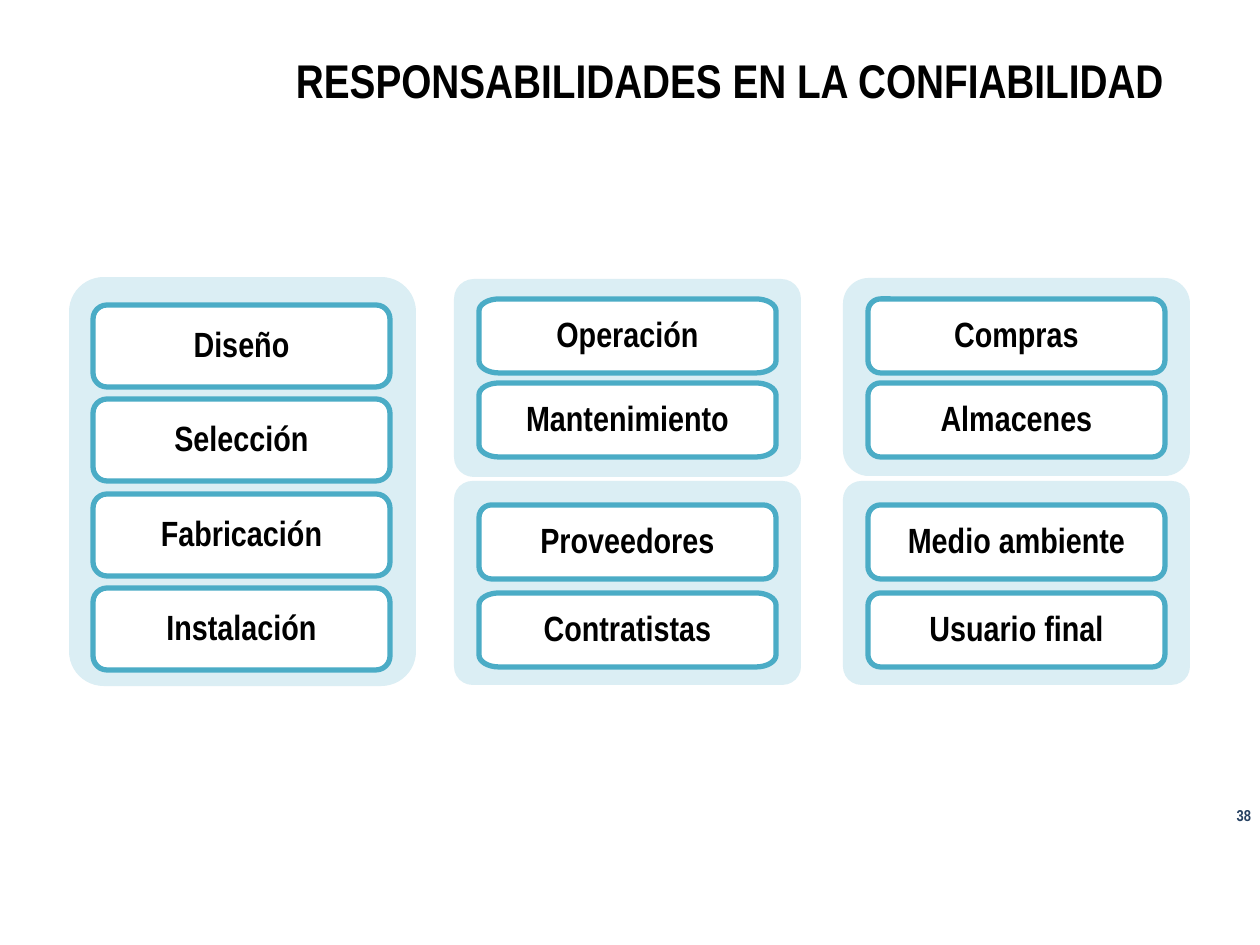
import pptx
import pptx.util
from lxml import etree
from pptx.dml.color import RGBColor
from pptx.enum.shapes import MSO_SHAPE
from pptx.enum.text import MSO_ANCHOR, PP_ALIGN
from pptx.oxml.ns import qn

PX = 914400 // 126

THEME = {
    "font": "Arial Narrow",
    "panel": "DBEEF4", "box": "FFFFFF", "line": "4BACC6",
    "ink": "000000", "page": "254061",
    "title_pt": 27, "box_pt": 20, "page_pt": 9, "line_pt": 3,
}

TITLE = "RESPONSABILIDADES EN LA CONFIABILIDAD"
PAGE = "38"

# Panel: left, top, height, corner; boxes: left, first top, last top, height.
# Each label is paired with whether its corners are wide (elliptical).
PANELS = [
    {"panel": (69, 277, 409, 0.1), "boxes": (93, 305, 588, 82),
     "labels": [("Diseño", False), ("Selección", False),
                ("Fabricación", False), ("Instalación", False)]},
    {"panel": (454, 279, 198, 0.1), "boxes": (479, 299, 383, 74),
     "labels": [("Operación", True), ("Mantenimiento", True)]},
    {"panel": (843, 278, 198, 0.13), "boxes": (868, 299, 383, 74),
     "labels": [("Compras", False), ("Almacenes", False)]},
    {"panel": (454, 481, 204, 0.09), "boxes": (479, 505, 593, 74),
     "labels": [("Proveedores", False), ("Contratistas", True)]},
    {"panel": (843, 481, 204, 0.09), "boxes": (868, 505, 593, 74),
     "labels": [("Medio ambiente", False), ("Usuario final", False)]},
]
PANEL_W, BOX_W = 347, 297
WIDE_RX, WIDE_RY = 20, 12
BEND = 0.45  # how far a curve's handle stays from the corner, as a share


def color(name):
    return RGBColor.from_string(THEME[name])


def write(shape, text, size, ink="ink", align=PP_ALIGN.CENTER, pad=(12, 6), gap=0.9):
    frame = shape.text_frame
    side, edge = (n * PX for n in pad)
    form = {"word_wrap": True, "vertical_anchor": MSO_ANCHOR.MIDDLE,
            "margin_left": side, "margin_right": side,
            "margin_top": edge, "margin_bottom": edge}
    for key, value in form.items():
        setattr(frame, key, value)
    para = frame.paragraphs[0]
    para.alignment, para.line_spacing = align, gap
    run = para.add_run()
    run.text = text
    face = {"name": THEME["font"], "size": pptx.util.Pt(THEME[size]), "bold": True}
    for key, value in face.items():
        setattr(run.font, key, value)
    run.font.color.rgb = color(ink)


def paint(shape, fill, line=None):
    shape.shadow.inherit = False
    shape.fill.solid()
    shape.fill.fore_color.rgb = color(fill)
    if line:
        shape.line.color.rgb = color(line)
        shape.line.width = pptx.util.Pt(THEME["line_pt"])
    else:
        shape.line.fill.background()


def round_box(slide, rect, corner):
    shape = slide.shapes.add_shape(
        MSO_SHAPE.ROUNDED_RECTANGLE, *(n * PX for n in rect))
    shape.adjustments[0] = corner
    return shape


def wide_box(slide, rect):
    """Draw a box whose corners are quarter ellipses, wider than tall."""
    x, y, w, h = rect
    corners = [(x, y, 1, 1), (x + w, y, -1, 1),
               (x + w, y + h, -1, -1), (x, y + h, 1, -1)]
    points = []
    for cx, cy, right, down in corners:
        dx, dy = right * WIDE_RX, down * WIDE_RY
        arc = [(cx, cy + dy), (cx, cy + dy * BEND),
               (cx + dx * BEND, cy), (cx + dx, cy)]
        points += arc if right == down else arc[::-1]
    points = [(round(px * PX), round(py * PX)) for px, py in points]
    path = slide.shapes.build_freeform(*points[0])
    path.add_line_segments(points[1:], close=True)
    shape = path.convert_to_shape()
    lines = list(shape.element.iter(qn("a:lnTo")))
    for start in range(0, len(lines), len(corners)):
        curve = etree.Element(qn("a:cubicBezTo"))
        lines[start].addprevious(curve)
        for line in lines[start:start + 3]:
            curve.append(line[0])
            line.getparent().remove(line)
    return shape


def add_text(slide, rect, *args, **form):
    write(slide.shapes.add_textbox(*(n * PX for n in rect)), *args, **form)


def add_panel(slide, data):
    left, top, high, corner = data["panel"]
    paint(round_box(slide, (left, top, PANEL_W, high), corner), "panel")
    side, first, last, tall = data["boxes"]
    labels = data["labels"]
    for row, (label, wide) in enumerate(labels):
        box_top = first + round(row * (last - first) / (len(labels) - 1))
        rect = (side, box_top, BOX_W, tall)
        box = wide_box(slide, rect) if wide else round_box(slide, rect, 0.17)
        paint(box, "box", "line")
        write(box, label, "box_pt", pad=(11, 11))


def main():
    deck = pptx.Presentation()
    deck.slide_width, deck.slide_height = 1260 * PX, 945 * PX
    slide = deck.slides.add_slide(deck.slide_layouts[6])
    for data in PANELS:
        add_panel(slide, data)
    add_text(slide, (1040, 804, 220, 23), PAGE, "page_pt", "page",
             align=PP_ALIGN.RIGHT, pad=(9, 5), gap=1.0)
    add_text(slide, (260, 16, 940, 134), TITLE, "title_pt")
    deck.save("out.pptx")


if __name__ == "__main__":
    main()
